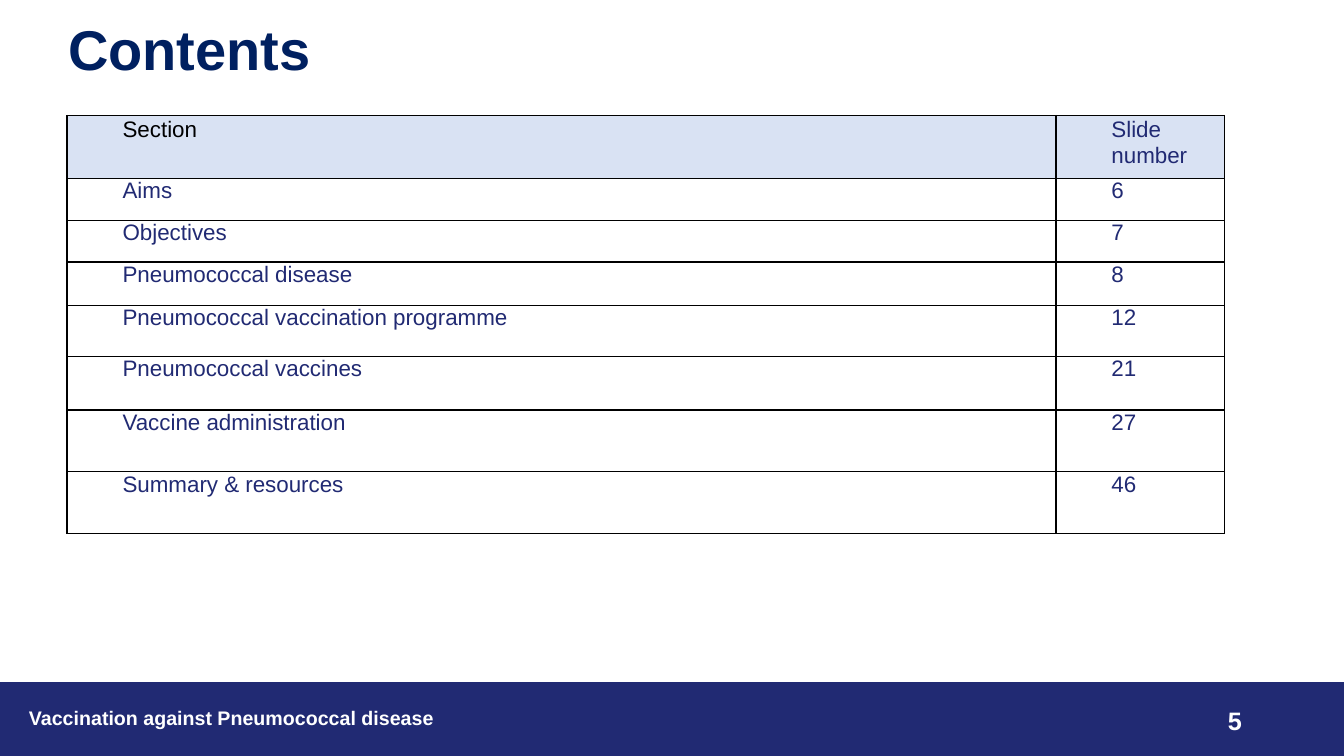
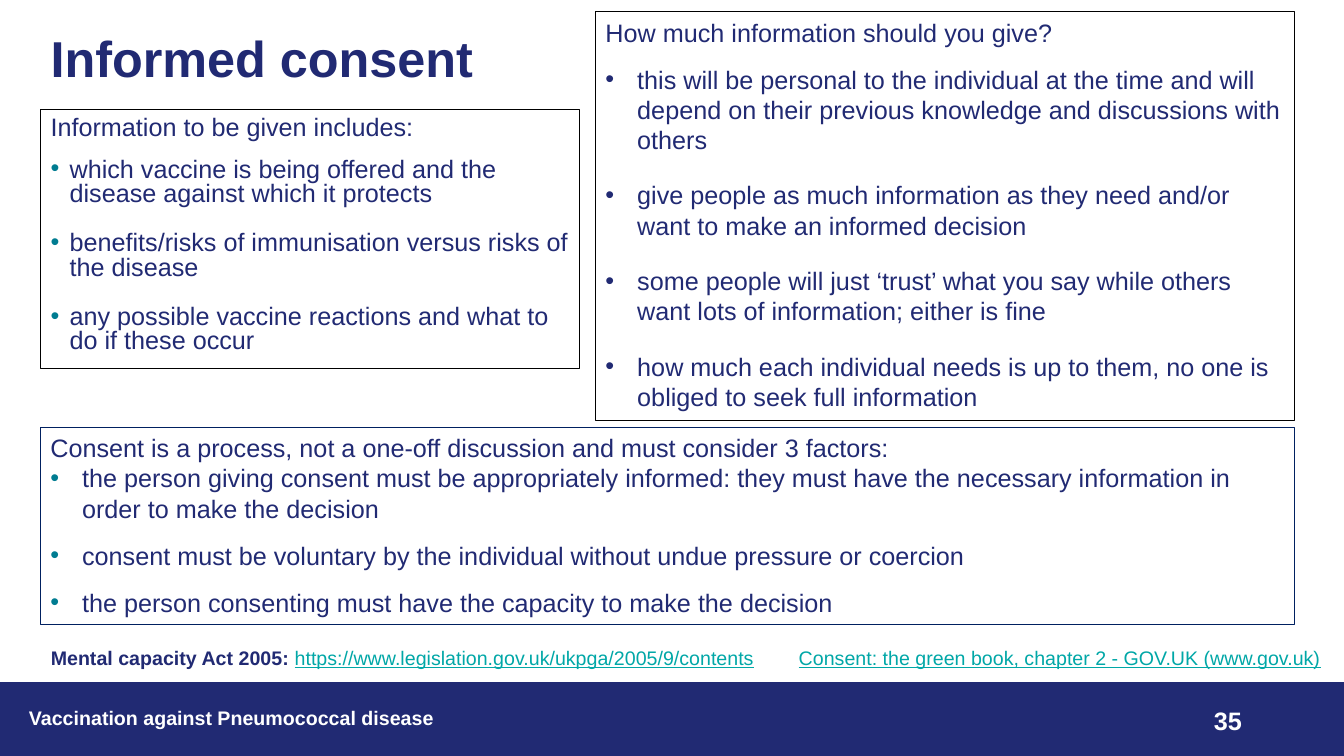
from lxml import etree
from pptx import Presentation
from pptx import util as u
from pptx.dml.color import RGBColor
from pptx.enum import shapes, text
from pptx.oxml import ns

Cm, Pt = u.Cm, u.Pt
FONT = "Arial"
HUES = {
    "navy": "212A73", "deep": "002060", "teal": "007C91", "link": "00A7A7",
    "pale": "D9E2F3", "black": "000000", "white": "FFFFFF",
}


def rgb(hue):
    return RGBColor.from_string(HUES[hue])


def node(parent, tag, **attrs):
    return etree.SubElement(parent, ns.qn(tag), attrs)


def tint(parent, hue):
    node(parent, "a:srgbClr", val=HUES[hue])


def write(par, words, size=18, hue="navy", bold=False, under=False,
          align="LEFT", lines=1.0, before=0, after=0,
          indent=0, hang=0, bullet=None):
    """Add a run to a paragraph and set the format of both."""
    run = par.add_run()
    run.text = words
    font = run.font
    font.name, font.size, font.bold, font.underline = FONT, Pt(size), bold, under
    font.color.rgb = rgb(hue)
    par.alignment = getattr(text.PP_ALIGN, align)
    par.line_spacing = lines
    par.space_before, par.space_after = Pt(before), Pt(after)
    props = par._p.get_or_add_pPr()
    props.set("marL", str(Cm(indent)))
    props.set("indent", str(Cm(-hang)))
    for old in props.xpath("a:buClr | a:buFont | a:buChar | a:buNone"):
        props.remove(old)
    if bullet:
        tint(node(props, "a:buClr"), bullet)
        node(props, "a:buFont", typeface=FONT)
        node(props, "a:buChar", char="•")
    else:
        node(props, "a:buNone")


class Deck:
    """Holds the shared style and the current slide."""

    def __init__(self):
        self.prs = Presentation()
        self.prs.slide_width, self.prs.slide_height = Cm(33.87), Cm(19.05)

    def start(self, layout, number):
        """New slide with the footer band, its text and the number."""
        self.slide = self.prs.slides.add_slide(self.prs.slide_layouts[layout])
        band = self.slide.shapes.add_shape(
            shapes.MSO_SHAPE.RECTANGLE, *map(Cm, (0, 17.2, 33.87, 1.85)))
        band.shadow.inherit = False
        band.fill.solid()
        band.fill.fore_color.rgb = rgb("navy")
        self.edge(band, "navy", 1)
        look = dict(hue="white", bold=True)
        self.label((23.93, 17.66, 7.62, 1.02),
                   [(str(number), dict(look, align="RIGHT"))])
        self.label((0.48, 17.66, 20.32, 1.02),
                   [("Vaccination against Pneumococcal disease", dict(look, size=14))])

    def edge(self, shape, hue, width=0.75):
        shape.line.color.rgb = rgb(hue)
        shape.line.width = Pt(width)

    def place(self, shape, area):
        shape.left, shape.top, shape.width, shape.height = map(Cm, area)
        frame = shape.text_frame
        frame.word_wrap = True
        frame.auto_size = text.MSO_AUTO_SIZE.NONE
        frame.vertical_anchor = text.MSO_ANCHOR.TOP
        return frame

    def title(self, words, area, size, hue):
        frame = self.place(self.slide.shapes.title, area)
        write(frame.paragraphs[0], words, size=size, hue=hue, bold=True, lines=0.9)

    def label(self, area, runs):
        """One line of text made of one or more runs."""
        shape = self.slide.shapes.add_textbox(*map(Cm, area))
        par = self.place(shape, area).paragraphs[0]
        for words, look in runs:
            write(par, words, **look)

    def panel(self, area, hue, head, items, look, top=None, first=None, body=False):
        """Outlined box with a heading and a bulleted list."""
        if body:
            shape = self.slide.placeholders[1]
        else:
            shape = self.slide.shapes.add_textbox(*map(Cm, area))
        self.edge(shape, hue)
        frame = self.place(shape, area)
        write(frame.paragraphs[0], head, **(top or {}))
        for spot, words in enumerate(items):
            extra = first if first and spot == 0 else {}
            write(frame.add_paragraph(), words, **{**look, **extra})

    def table(self, spot, cols, rows, data):
        grid = self.slide.shapes.add_table(
            len(rows), len(cols), *map(Cm, (*spot, sum(cols), sum(rows)))).table
        for col, width in zip(grid.columns, cols):
            col.width = Cm(width)
        for r, (height, line) in enumerate(zip(rows, data)):
            grid.rows[r].height = Cm(height)
            for c, words in enumerate(line):
                self.cell(grid.cell(r, c), words, head=r == 0,
                          hue="black" if r == c == 0 else "navy")

    def cell(self, cell, words, head, hue):
        cell.margin_left = cell.margin_right = Cm(0.13)
        cell.margin_top = cell.margin_bottom = 0
        props = cell._tc.get_or_add_tcPr()
        for side in "LRTB":
            line = node(props, f"a:ln{side}", w=str(Pt(1)))
            tint(node(line, "a:solidFill"), "black")
        if head:
            cell.fill.solid()
            cell.fill.fore_color.rgb = rgb("pale")
        else:
            cell.fill.background()
        write(cell.text_frame.paragraphs[0], words, size=16, hue=hue,
              lines=1.07 if head else 1.0, indent=1.27)


def contents(deck):
    deck.start(5, 5)
    deck.title("Contents", (1.46, 0.43, 29.69, 3.68), 40, "deep")
    deck.table((1.69, 2.91), (24.92, 4.25),
               (1.59, 1.06, 1.04, 1.1, 1.29, 1.34, 1.56, 1.56),
               [("Section", "Slide number"),
                ("Aims", "6"),
                ("Objectives", "7"),
                ("Pneumococcal disease", "8"),
                ("Pneumococcal vaccination programme", "12"),
                ("Pneumococcal vaccines", "21"),
                ("Vaccine administration", "27"),
                ("Summary & resources", "46")])


def consent(deck):
    deck.start(1, 35)
    deck.title("Informed consent", (1.02, 0.74, 29.21, 2.03), 36, "navy")
    wide = dict(indent=0.8, hang=0.8, before=12)

    # What to tell
    deck.panel((1.02, 2.77, 13.59, 6.52), "black",
               "Information to be given includes:",
               ["which vaccine is being offered and the disease against which it protects",
                "benefits/risks of immunisation versus risks of the disease",
                "any possible vaccine reactions and what to do if these occur"],
               dict(indent=0.48, hang=0.48, lines=0.8, before=12, after=6, bullet="teal"),
               top=dict(lines=0.9, before=10), body=True)

    # How much to tell
    deck.panel((15.01, 0.3, 17.62, 10.31), "black",
               "How much information should you give?",
               ["this will be personal to the individual at the time and will depend on "
                "their previous knowledge and discussions with others",
                "give people as much information as they need and/or want to make an "
                "informed decision",
                "some people will just ‘trust’ what you say while others want lots of "
                "information; either is fine",
                "how much each individual needs is up to them, no one is obliged to seek "
                "full information"],
               dict(wide, after=6, bullet="navy"))

    # Three factors
    deck.panel((1.02, 10.77, 31.6, 4.96), "deep",
               "Consent is a process, not a one-off discussion and must consider 3 factors:",
               ["the person giving consent must be appropriately informed: they must have "
                "the necessary information in order to make the decision",
                "consent must be voluntary by the individual without undue pressure or coercion",
                "the person consenting must have the capacity to make the decision"],
               dict(wide, bullet="teal"), first=dict(before=0))

    # Sources
    link = dict(size=14, hue="link", under=True)
    deck.label((1.03, 16.15, 18.7, 0.86),
               [("Mental capacity Act 2005: ", dict(size=14, bold=True)),
                ("https://www.legislation.gov.uk/ukpga/2005/9/contents", link)])
    deck.label((19.88, 16.15, 13.9, 0.86),
               [("Consent: the green book, chapter 2 - GOV.UK (www.gov.uk)", link)])


def main():
    deck = Deck()
    contents(deck)
    consent(deck)
    deck.prs.save("out.pptx")


if __name__ == "__main__":
    main()
